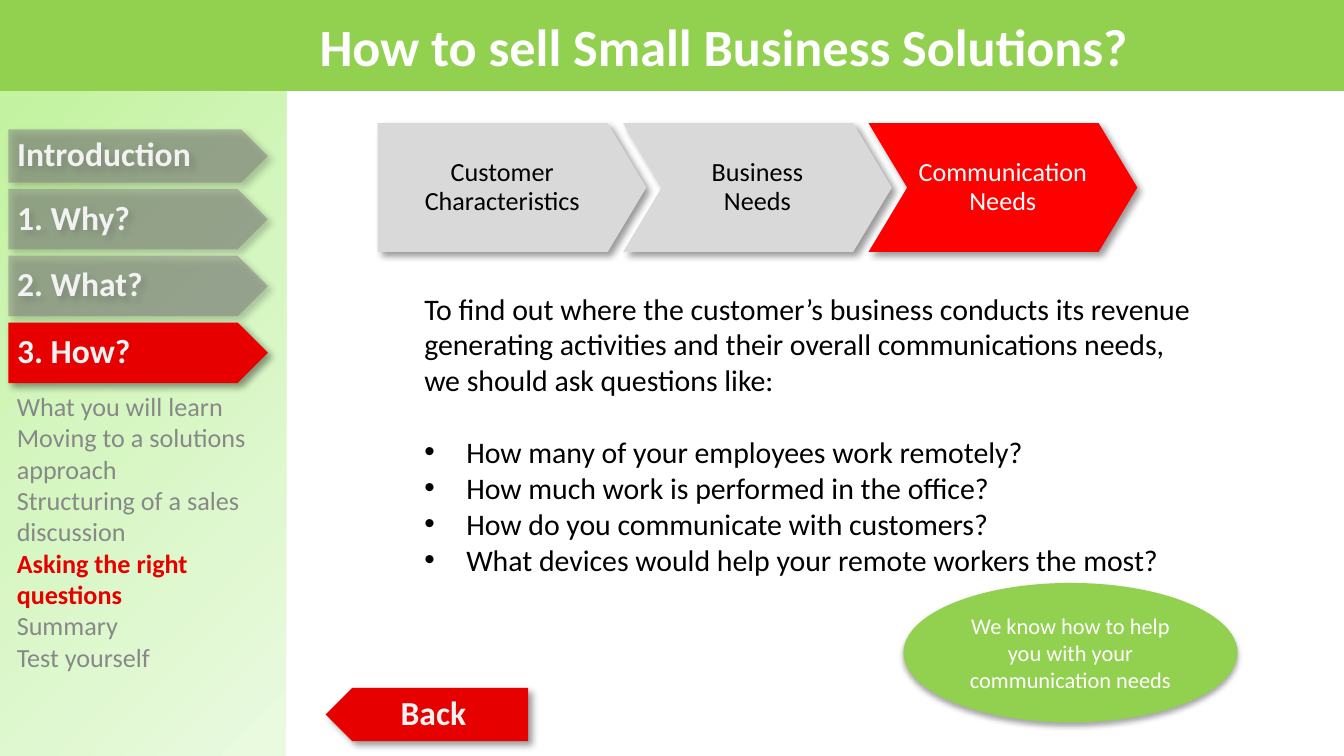
from dataclasses import dataclass

from lxml import etree
from pptx import Presentation
from pptx.dml.color import RGBColor
from pptx.enum.shapes import MSO_SHAPE
from pptx.enum.text import MSO_ANCHOR, PP_ALIGN
from pptx.oxml import parse_xml
from pptx.oxml.ns import nsdecls, qn
from pptx.util import Pt

RECT, OVAL = MSO_SHAPE.RECTANGLE, MSO_SHAPE.OVAL
PLATE, CHEVRON = MSO_SHAPE.PENTAGON, MSO_SHAPE.CHEVRON
TOP, MID = MSO_ANCHOR.TOP, MSO_ANCHOR.MIDDLE
LEFT, CENTER = PP_ALIGN.LEFT, PP_ALIGN.CENTER


@dataclass(frozen=True)
class Theme:
    face: str = "Calibri"
    green: str = "92D050"
    red: str = "E60000"
    bright: str = "FF0000"
    gray: str = "808080"
    muted: str = "888888"
    pale: str = "D9D9D9"
    light: str = "F2F2F2"
    white: str = "FFFFFF"
    black: str = "000000"
    fade: tuple = ("BEF297", "D5F6C0", "EAFAE0")
    title: int = 28
    label: int = 18
    body: int = 16
    small: int = 14
    note: int = 12
    drop: tuple = (40, 4, 3, 45)
    soft: tuple = (35, 3.1, 1.8, 90)


THEME = Theme()


def add_shape(slide, kind, box, fill, shade=None, alpha=None):
    shape = slide.shapes.add_shape(kind, *map(Pt, box))
    shape.shadow.inherit = False
    shape.line.fill.background()
    shape.fill.solid()
    shape.fill.fore_color.rgb = RGBColor.from_string(fill)
    props = shape.element.spPr
    if alpha:
        color = props.find(".//" + qn("a:srgbClr"))
        etree.SubElement(color, qn("a:alpha"), val=str(alpha * 1000))
    if shade:
        depth, blur, dist, angle = shade
        props.find(qn("a:effectLst")).append(parse_xml(
            f'<a:outerShdw {nsdecls("a")} blurRad="{Pt(blur)}" dist="{Pt(dist)}" '
            f'dir="{angle * 60000}" algn="tl" rotWithShape="0">'
            f'<a:srgbClr val="{THEME.black}"><a:alpha val="{depth * 1000}"/>'
            '</a:srgbClr></a:outerShdw>'))
    return shape


def set_frame(shape, inset=(0, 0, 0, 0), anchor=MID):
    frame = shape.text_frame
    frame.word_wrap = True
    frame.vertical_anchor = anchor
    (frame.margin_left, frame.margin_top,
     frame.margin_right, frame.margin_bottom) = map(Pt, inset)
    return frame


def style(para, size, color, bold=False, align=LEFT, space=None):
    para.alignment = align
    if space:
        para.line_spacing = space
    font = para.font
    font.name, font.size, font.bold = THEME.face, Pt(size), bold
    font.color.rgb = RGBColor.from_string(color)


def write(shape, text, size, color, inset=(1, 1, 1, 1), **look):
    para = set_frame(shape, inset).paragraphs[0]
    para.text = text
    style(para, size, color, **look)


def add_lines(slide, box, lines):
    frame = set_frame(slide.shapes.add_textbox(*map(Pt, box)), anchor=TOP)
    for i, text in enumerate(lines):
        para = frame.add_paragraph() if i else frame.paragraphs[0]
        para.text = text
    return frame.paragraphs


def add_header(slide, box, text):
    x, y, w, h = box
    add_shape(slide, RECT, box, THEME.green)
    title = slide.shapes.add_textbox(Pt(x + 111), Pt(y - 4), Pt(553), Pt(h + 8))
    write(title, text, THEME.title, THEME.white, (0, 0, 0, 0),
          bold=True, align=CENTER)


def add_menu(slide, box, tabs, topics, chosen):
    x, y, w, h = box
    panel = add_shape(slide, RECT, box, THEME.fade[0])
    stops = "".join(f'<a:gs pos="{i * 50000}"><a:srgbClr val="{c}"/></a:gs>'
                    for i, c in enumerate(THEME.fade))
    props = panel.element.spPr
    props.replace(props.find(qn("a:solidFill")), parse_xml(
        f'<a:gradFill {nsdecls("a")} rotWithShape="1"><a:gsLst>{stops}</a:gsLst>'
        '<a:path path="circle"><a:fillToRect r="100000" b="100000"/></a:path>'
        '</a:gradFill>'))

    top = y + 69.3
    for i, text in enumerate(tabs):
        tall = 32.4 if i else 28.5
        live = i == len(tabs) - 1
        tab = add_shape(slide, PLATE, (x + 4.5, top, 139, tall),
                        THEME.red if live else THEME.gray, THEME.drop,
                        None if live else 50)
        write(tab, text, THEME.label, THEME.light, (4.7, 1, 1, 1),
              bold=True, space=0.9)
        top += tall + 3.4

    for para in add_lines(slide, (x + 9, y + 209, 141, 190), topics):
        live = para.text == chosen
        style(para, THEME.small, THEME.red if live else THEME.muted, live)


def add_chain(slide, box, steps):
    x, y, w, h = box
    wide = 144
    pitch = (w - wide) / (len(steps) - 1)
    for i, text in enumerate(steps):
        live = i == len(steps) - 1
        step = add_shape(slide, CHEVRON if i else PLATE,
                         (x + i * pitch, y, wide, h),
                         THEME.bright if live else THEME.pale, THEME.drop)
        step.adjustments[0] = 0.3
        write(step, text, THEME.small, THEME.white if live else THEME.black,
              align=CENTER, space=0.9)


def add_body(slide, box, lead, asks):
    for i, para in enumerate(add_lines(slide, box, [lead, *asks])):
        if i:
            props = para._p.get_or_add_pPr()
            props.set("marL", str(Pt(22.5)))
            props.set("indent", str(Pt(-22.5)))
            etree.SubElement(props, qn("a:buFont"), typeface="Arial")
            etree.SubElement(props, qn("a:buChar"), char="•")
        if i == 1:
            para.space_before = Pt(19.3)
        style(para, THEME.body, THEME.black)


def add_note(slide, box, text):
    oval = add_shape(slide, OVAL, box, THEME.green, THEME.soft)
    write(oval, text, THEME.note, THEME.white, (7, 3, 7, 3), align=CENTER)


def add_back(slide, box, text):
    plate = add_shape(slide, PLATE, box, THEME.red, THEME.drop)
    plate.element.spPr.find(qn("a:xfrm")).set("flipH", "1")
    write(plate, text, THEME.label, THEME.light,
          bold=True, align=CENTER, space=0.9)


def main():
    deck = Presentation()
    deck.slide_width, deck.slide_height = Pt(720), Pt(405)
    slide = deck.slides.add_slide(deck.slide_layouts[6])
    add_back(slide, (174.5, 368.5, 108.5, 28.5), "Back")
    add_body(
        slide, (227.3, 155.5, 412, 163.5),
        "To find out where the customer’s business conducts its revenue "
        "generating activities and their overall communications needs, "
        "we should ask questions like:",
        ["How many of your employees work remotely?",
         "How much work is performed in the office?",
         "How do you communicate with customers?",
         "What devices would help your remote workers the most?"])
    add_note(slide, (484, 312.3, 179, 74.7),
             "We know how to help you with your communication needs")
    add_menu(
        slide, (0, 0, 153.3, 405),
        ["Introduction", "1. Why?", "2. What?", "3. How?"],
        ["What you will learn", "Moving to a solutions approach",
         "Structuring of a sales discussion", "Asking the right questions",
         "Summary", "Test yourself"],
        "Asking the right questions")
    add_header(slide, (0, 0, 720, 48.7), "How to sell Small Business Solutions?")
    add_chain(slide, (202.3, 66, 407, 69),
              ["Customer\vCharacteristics", "Business\vNeeds",
               "Communication\vNeeds"])
    deck.save("out.pptx")


if __name__ == "__main__":
    main()
